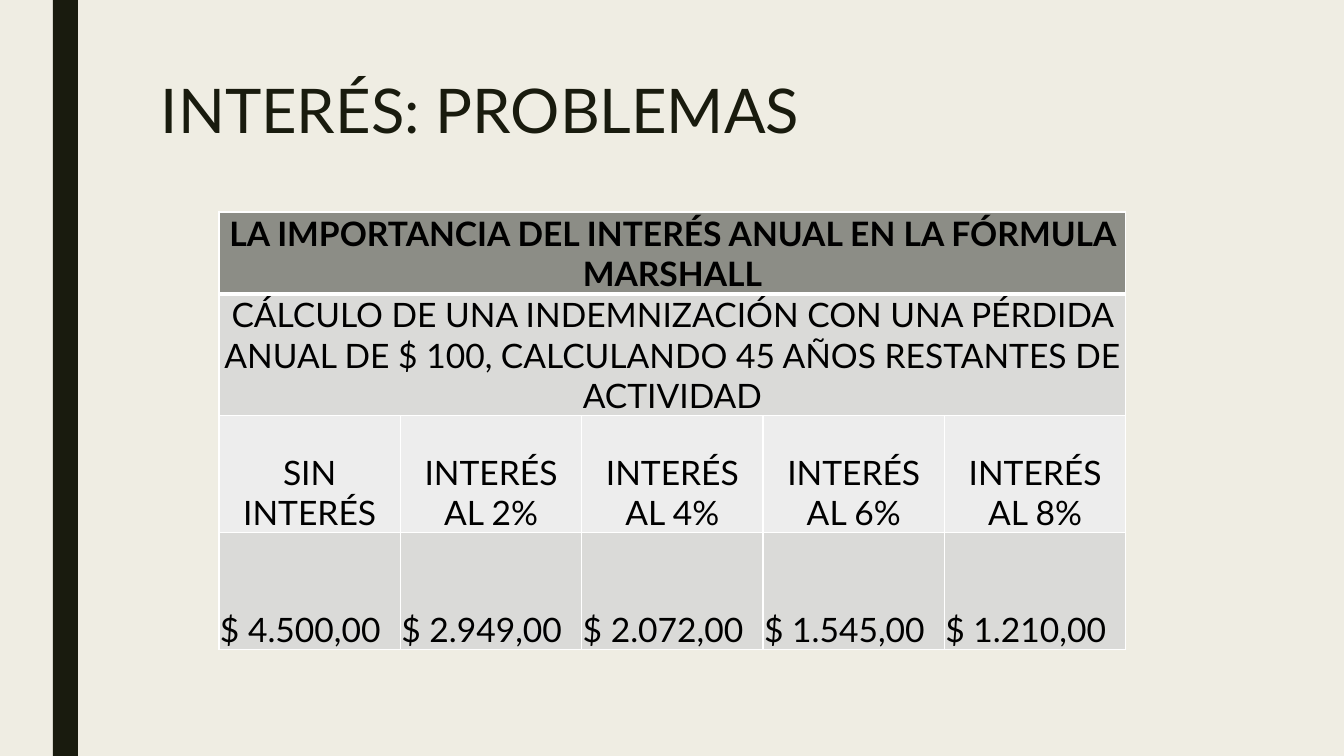
"""Build the slide on how the interest rate changes a compensation."""
from lxml import etree
from pptx import Presentation
from pptx import util as u
from pptx.dml.color import RGBColor
from pptx.enum import shapes, text
from pptx.oxml import ns

THEME = {
    "font": "Lato", "title_size": 44, "table_size": 24,
    "bg": "EFEDE3", "dark": "191B0E", "ink": "000000", "border": "FFFFFF",
    "header": "8C8D86", "band": "DADAD8", "light": "EDEDED",
}
SCALE = 12192000 / 1344


def px(n):
    return u.Emu(round(n * SCALE))


def write(tf, words, size, color, align, bold=False):
    p = tf.paragraphs[0]
    p.alignment = align
    r = p.add_run()
    r.text = words
    font = {"name": THEME["font"], "size": u.Pt(size), "bold": bold}
    for key, value in font.items():
        setattr(r.font, key, value)
    r.font.color.rgb = RGBColor.from_string(color)
    return p


prs = Presentation()
prs.slide_width, prs.slide_height = px(1344), px(756)
s = prs.slides.add_slide(prs.slide_layouts[6])
s.background.fill.solid()
s.background.fill.fore_color.rgb = RGBColor.from_string(THEME["bg"])

bar = s.shapes.add_shape(shapes.MSO_SHAPE.RECTANGLE, px(53), 0, px(25), px(756))
bar.shadow.inherit = False
bar.fill.solid()
bar.fill.fore_color.rgb = RGBColor.from_string(THEME["dark"])
bar.line.fill.background()

title = s.shapes.add_textbox(px(151), px(76), px(1058), px(163))
title.text_frame.word_wrap = True
p = write(title.text_frame, "INTERÉS: PROBLEMAS", THEME["title_size"],
          THEME["dark"], text.PP_ALIGN.LEFT)
p.line_spacing = 0.89

center, justify = text.PP_ALIGN.CENTER, text.PP_ALIGN.JUSTIFY
rows = [
    (60, "header", center, ["LA IMPORTANCIA DEL INTERÉS ANUAL EN LA FÓRMULA MARSHALL"]),
    (117, "band", center, ["CÁLCULO DE UNA INDEMNIZACIÓN CON UNA PÉRDIDA ANUAL DE $ 100, "
                           "CALCULANDO 45 AÑOS RESTANTES DE ACTIVIDAD"]),
    (117, "light", center,
     ["SIN INTERÉS"] + [f"INTERÉS AL {rate}%" for rate in (2, 4, 6, 8)]),
    (117, "band", justify,
     ["$ 4.500,00", "$ 2.949,00", "$ 2.072,00", "$ 1.545,00", "$ 1.210,00"]),
]
cell_format = {
    "margin_left": px(1), "margin_right": px(1), "margin_top": px(1),
    "margin_bottom": 0, "vertical_anchor": text.MSO_ANCHOR.BOTTOM,
}
columns = 5
table = s.shapes.add_table(len(rows), columns, px(219), px(212), px(907), px(438)).table
table.first_row = table.horz_banding = False
for column in table.columns:
    column.width = px(181.4)

for i, (height, fill, align, words) in enumerate(rows):
    table.rows[i].height = px(height)
    if len(words) == 1:
        table.cell(i, 0).merge(table.cell(i, columns - 1))
    for j in range(columns):
        cell = table.cell(i, j)
        for key, value in cell_format.items():
            setattr(cell, key, value)
        for side in "LRTB":
            thick = (i, side) in ((0, "B"), (1, "T"))
            line = etree.SubElement(cell._tc.get_or_add_tcPr(), ns.qn(f"a:ln{side}"),
                                    w=str(u.Pt(3 if thick else 1)))
            solid = etree.SubElement(line, ns.qn("a:solidFill"))
            etree.SubElement(solid, ns.qn("a:srgbClr"), val=THEME["border"])
        cell.fill.solid()
        cell.fill.fore_color.rgb = RGBColor.from_string(THEME[fill])
        if j < len(words):
            write(cell.text_frame, words[j], THEME["table_size"], THEME["ink"],
                  align, bold=fill == "header")

prs.save("out.pptx")
